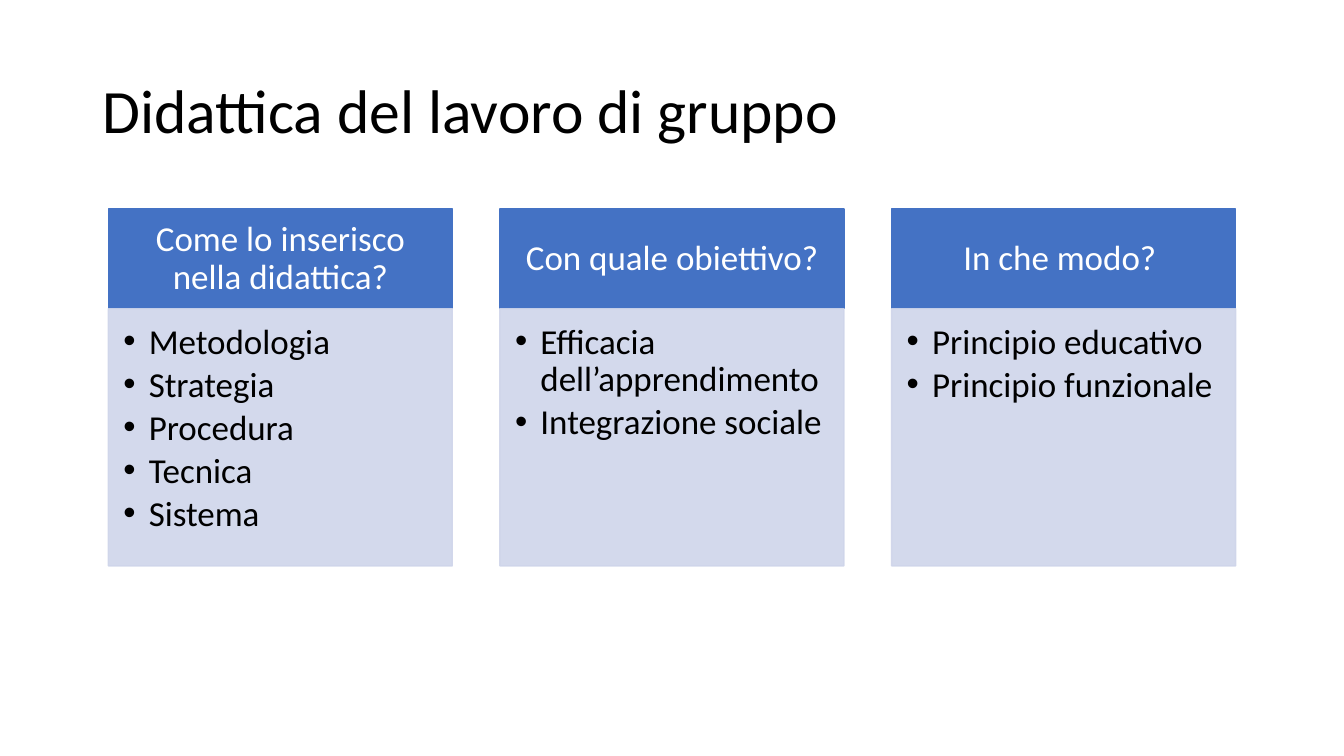
"""Build the slide on teaching with group work: a title over three headed lists."""
from dataclasses import dataclass

from lxml import etree
from pptx import Presentation
from pptx.dml.color import RGBColor
from pptx.enum.shapes import MSO_SHAPE
from pptx.enum.text import MSO_ANCHOR, PP_ALIGN
from pptx.oxml.ns import qn
from pptx.shapes.autoshape import Shape
from pptx.slide import Slide
from pptx.text.text import TextFrame
from pptx.util import Cm, Pt

RECT = MSO_SHAPE.RECTANGLE
TOP, MIDDLE = MSO_ANCHOR.TOP, MSO_ANCHOR.MIDDLE
LEFT, CENTER = PP_ALIGN.LEFT, PP_ALIGN.CENTER

COLORS = {"header": "4472C4", "body": "CFD5EA", "light": "FFFFFF", "dark": "000000"}
FONT = "Calibri"
COLUMN_LEFT, COLUMN_STEP, COLUMN_WIDTH = 2.73, 9.87, 8.67
HEADER_TOP, HEADER_HEIGHT, BODY_HEIGHT = 5.27, 2.51, 6.48
BODY_OPACITY = 90
BULLET_INDENT = 0.64


@dataclass(frozen=True)
class Column:
    heading: str
    items: tuple[str, ...]


COLUMNS = (
    Column("Come lo inserisco nella didattica?",
           ("Metodologia", "Strategia", "Procedura", "Tecnica", "Sistema")),
    Column("Con quale obiettivo?",
           ("Efficacia dell’apprendimento", "Integrazione sociale")),
    Column("In che modo? ", ("Principio educativo", "Principio funzionale")),
)


def rgb(name: str) -> RGBColor:
    return RGBColor.from_string(COLORS[name])


def write(tf: TextFrame, text: str, size: float, color: str, align: PP_ALIGN,
          anchor: MSO_ANCHOR, insets: tuple[float, float, float, float]) -> None:
    tf.text = text
    tf.word_wrap = True
    tf.vertical_anchor = anchor
    tf.margin_left, tf.margin_top, tf.margin_right, tf.margin_bottom = map(Cm, insets)
    for p in tf.paragraphs:
        p.alignment = align
        p.line_spacing = 0.9
        for r in p.runs:
            r.font.name = FONT
            r.font.size = Pt(size)
            r.font.color.rgb = rgb(color)


def add_bullets(tf: TextFrame) -> None:
    for p in tf.paragraphs:
        p.space_after = Pt(3.75)
        props = p._p.get_or_add_pPr()
        props.set("marL", str(Cm(BULLET_INDENT)))
        props.set("indent", str(-Cm(BULLET_INDENT)))
        etree.SubElement(props, qn("a:buFont"), typeface="Arial")
        etree.SubElement(props, qn("a:buChar"), char="•")


def add_box(s: Slide, left: float, top: float, height: float, color: str) -> Shape:
    sp = s.shapes.add_shape(RECT, Cm(left), Cm(top), Cm(COLUMN_WIDTH), Cm(height))
    sp.shadow.inherit = False
    sp.fill.solid()
    sp.fill.fore_color.rgb = rgb(color)
    sp.line.color.rgb = rgb(color)
    sp.line.width = Pt(1)
    return sp


def set_opacity(sp: Shape, percent: int) -> None:
    for color in sp._element.spPr.iter(qn("a:srgbClr")):
        etree.SubElement(color, qn("a:alpha"), val=str(percent * 1000))


def add_column(s: Slide, left: float, column: Column) -> None:
    header = add_box(s, left, HEADER_TOP, HEADER_HEIGHT, "header")
    write(header.text_frame, column.heading, 25, "light", CENTER, MIDDLE,
          (0.48, 0.28, 0.48, 0.28))
    body = add_box(s, left, HEADER_TOP + HEADER_HEIGHT, BODY_HEIGHT, "body")
    set_opacity(body, BODY_OPACITY)
    write(body.text_frame, "\n".join(column.items), 25, "dark", LEFT, TOP,
          (0.38, 0.38, 0.48, 0.56))
    add_bullets(body.text_frame)


def main() -> None:
    prs = Presentation()
    prs.slide_width, prs.slide_height = Cm(33.87), Cm(19.05)
    s = prs.slides.add_slide(prs.slide_layouts[6])
    title = s.shapes.add_textbox(Cm(2.33), Cm(1.01), Cm(29.21), Cm(3.68))
    write(title.text_frame, "Didattica del lavoro di gruppo", 44, "dark", LEFT, MIDDLE,
          (0.25, 0.13, 0.25, 0.13))
    for i, column in enumerate(COLUMNS):
        add_column(s, COLUMN_LEFT + i * COLUMN_STEP, column)
    prs.save("out.pptx")


if __name__ == "__main__":
    main()
